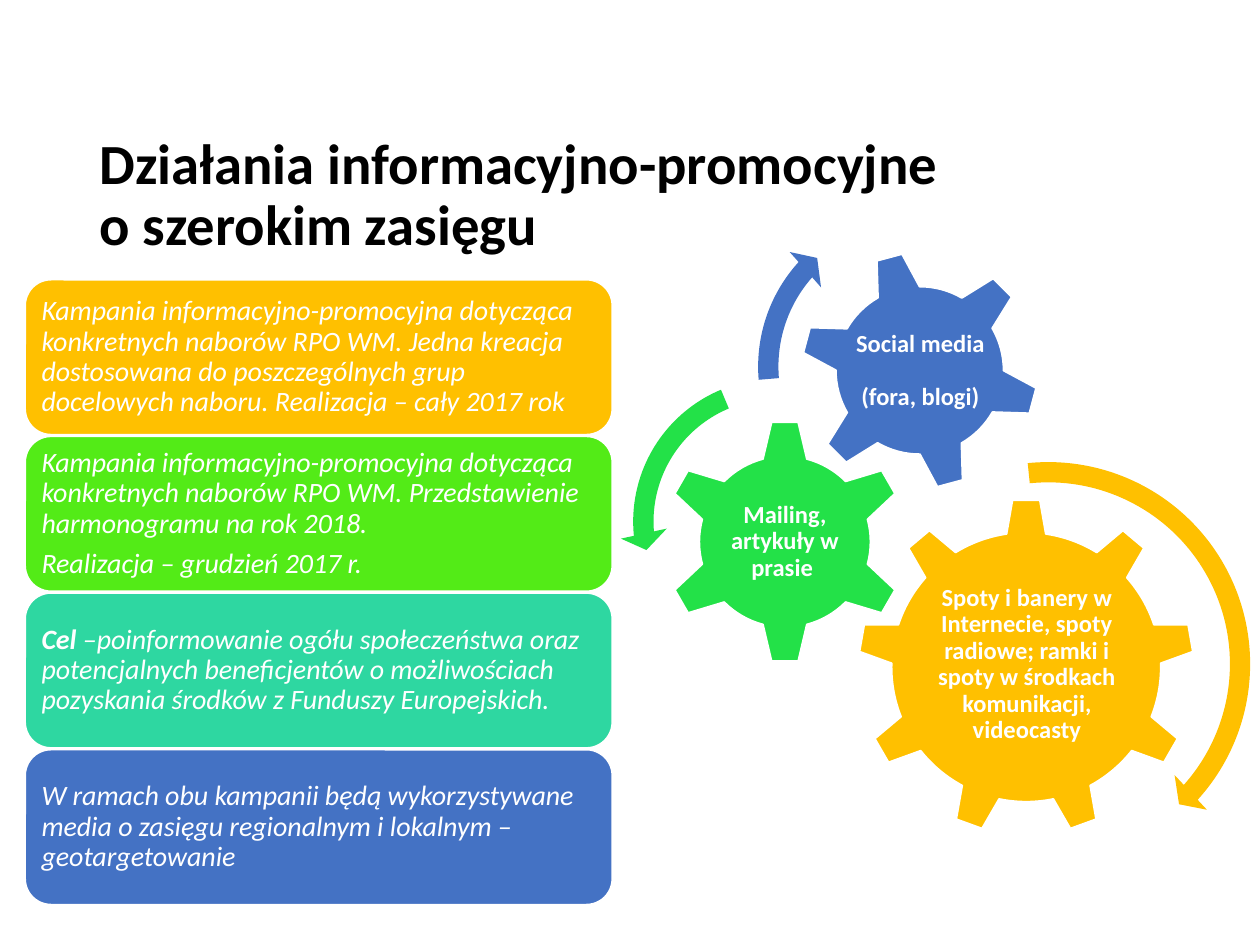
from dataclasses import dataclass

from pptx import Presentation
from pptx import util as u
from pptx.dml.color import RGBColor
from pptx.enum import shapes, text

COLORS = {
    "black": "000000",
    "white": "FFFFFF",
    "amber": "FFC000",
    "lime": "53EB17",
    "green": "23E148",
    "teal": "2ED7A1",
    "blue": "4472C4",
}
MSO = shapes.MSO_SHAPE
TITLE_FONT = {"name": "Calibri", "size": u.Pt(32.4), "bold": True}
CARD_FONT = {"name": "Calibri", "size": u.Pt(16), "italic": True}
GEAR_FONT = {"name": "Calibri", "size": u.Pt(14), "bold": True}

Box = tuple[float, float, float, float]


@dataclass
class Card:
    color: str
    paragraphs: list[str]
    lead: str = ""


@dataclass
class Gear:
    kind: MSO
    box: Box
    color: str
    text_box: Box
    paragraphs: list[str]
    gap: float = 0
    rotation: float = 0


@dataclass
class Arrow:
    kind: MSO
    box: Box
    color: str
    adjustments: list[float]


CARDS = [
    Card("amber", ["Kampania informacyjno-promocyjna dotycząca konkretnych naborów RPO WM. "
                   "Jedna kreacja dostosowana do poszczególnych grup docelowych naboru. "
                   "Realizacja – cały 2017 rok"]),
    Card("lime", ["Kampania informacyjno-promocyjna dotycząca konkretnych naborów RPO WM. "
                  "Przedstawienie harmonogramu na rok 2018.",
                  "Realizacja – grudzień 2017 r."]),
    Card("teal", [" –poinformowanie ogółu społeczeństwa oraz potencjalnych beneficjentów "
                  "o możliwościach pozyskania środków z Funduszy Europejskich."], lead="Cel"),
    Card("blue", ["W ramach obu kampanii będą wykorzystywane media o zasięgu regionalnym "
                  "i lokalnym – geotargetowanie"]),
]
GEARS = [
    Gear(MSO.GEAR_9, (6.81, 3.96, 2.67, 2.67), "amber", (7.35, 4.59, 1.6, 1.37),
         ["Spoty i banery w Internecie, spoty radiowe; ramki i spoty w środkach "
          "komunikacji, videocasty"]),
    Gear(MSO.GEAR_6, (5.26, 3.33, 1.94, 1.94), "green", (5.75, 3.82, 0.96, 0.96),
         ["Mailing, artykuły w prasie "]),
    Gear(MSO.GEAR_6, (6.35, 1.99, 1.9, 1.9), "blue", (6.77, 2.41, 1.07, 1.07),
         ["Social media", "(fora, blogi)"], gap=15, rotation=345),
]
ARROWS = [
    Arrow(MSO.CIRCULAR_ARROW, (6.61, 3.56, 3.42, 3.42), "amber",
          [0.047, 2.99, 25.218, 158.492, 0.055]),
    Arrow(MSO.LEFT_CIRCULAR_ARROW, (4.92, 2.9, 2.48, 2.48), "green",
          [0.065, 4.3, 104.891, 148.378, 0.075]),
    Arrow(MSO.CIRCULAR_ARROW, (5.91, 1.57, 2.68, 2.68), "blue",
          [0.06, 3.941, 133.138, 105.082, 0.07]),
]
CARD_LEFT, CARD_WIDTH, CARD_HEIGHT = 0.2, 4.66, 1.23
CARD_TOP, LAST_CARD_TOP = 2.22, 5.95


def rgb(color: str) -> RGBColor:
    return RGBColor.from_string(COLORS[color])


def inches(box: Box) -> list[u.Length]:
    return [u.Inches(v) for v in box]


def style_run(r, font: dict, color: str = "white") -> None:
    for name, value in font.items():
        setattr(r.font, name, value)
    r.font.color.rgb = rgb(color)


def set_frame(tf, inset: float) -> None:
    values = {"word_wrap": True, "vertical_anchor": text.MSO_ANCHOR.MIDDLE}
    values |= {f"margin_{side}": u.Inches(inset) for side in ("left", "top", "right", "bottom")}
    for name, value in values.items():
        setattr(tf, name, value)


def write(tf, paragraphs: list[str], font: dict, align, gap: float, lead: str = "") -> None:
    for i, words in enumerate(paragraphs):
        p = tf.add_paragraph() if i else tf.paragraphs[0]
        p.alignment, p.line_spacing = align, 0.9
        if i:
            p.space_before = u.Pt(gap)
        elif lead:
            r = p.add_run()
            r.text = lead
            style_run(r, font | {"bold": True})
        r = p.add_run()
        r.text = words
        style_run(r, font)


def add_filled(s, kind: MSO, box: Box, color: str, outlined: bool = True):
    sp = s.shapes.add_shape(kind, *inches(box))
    sp.shadow.inherit = False
    sp.fill.solid()
    sp.fill.fore_color.rgb = rgb(color)
    if outlined:
        sp.line.color.rgb = rgb("white")
        sp.line.width = u.Pt(1)
    else:
        sp.line.fill.background()
    return sp


def add_title(s) -> None:
    sp = s.shapes.title
    sp.left, sp.top, sp.width, sp.height = inches((0.69, 1.05, 8.62, 1.02))
    tf = sp.text_frame
    tf.vertical_anchor = text.MSO_ANCHOR.MIDDLE
    tf.auto_size = text.MSO_AUTO_SIZE.NONE
    p = tf.paragraphs[0]
    p.text = "Działania informacyjno-promocyjne \vo szerokim zasięgu"
    p.alignment, p.line_spacing = text.PP_ALIGN.LEFT, 0.9
    for r in p.runs:
        style_run(r, TITLE_FONT, "black")


def add_card(s, card: Card, top: float) -> None:
    sp = add_filled(s, MSO.ROUNDED_RECTANGLE,
                    (CARD_LEFT, top, CARD_WIDTH, CARD_HEIGHT), card.color)
    set_frame(sp.text_frame, 0.07)
    write(sp.text_frame, card.paragraphs, CARD_FONT, text.PP_ALIGN.LEFT, 5.6, card.lead)


def add_gear(s, gear: Gear) -> None:
    add_filled(s, gear.kind, gear.box, gear.color).rotation = gear.rotation
    # The label stays upright while its gear may be turned
    tf = s.shapes.add_textbox(*inches(gear.text_box)).text_frame
    set_frame(tf, 0.02)
    write(tf, gear.paragraphs, GEAR_FONT, text.PP_ALIGN.CENTER, gear.gap)


def add_arrow(s, arrow: Arrow) -> None:
    sp = add_filled(s, arrow.kind, arrow.box, arrow.color, outlined=False)
    for i, value in enumerate(arrow.adjustments):
        sp.adjustments[i] = value


def main() -> None:
    prs = Presentation()
    prs.slide_width, prs.slide_height = u.Inches(10), u.Inches(7.5)
    s = prs.slides.add_slide(prs.slide_layouts[5])
    add_title(s)

    # Gears with their turning arrows
    for gear in GEARS:
        add_gear(s, gear)
    for arrow in ARROWS:
        add_arrow(s, arrow)

    # Column of campaign cards
    pitch = (LAST_CARD_TOP - CARD_TOP) / (len(CARDS) - 1)
    for i, card in enumerate(CARDS):
        add_card(s, card, CARD_TOP + i * pitch)

    prs.save("out.pptx")


if __name__ == "__main__":
    main()
